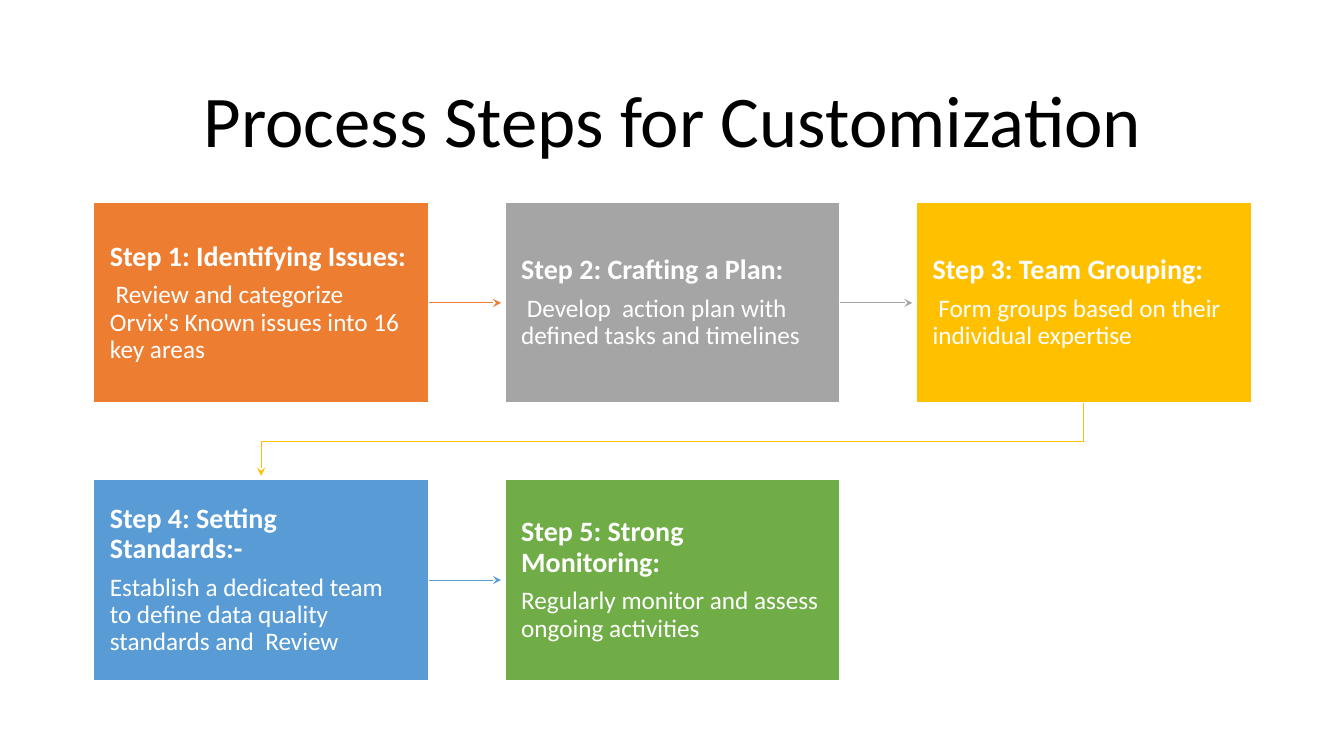
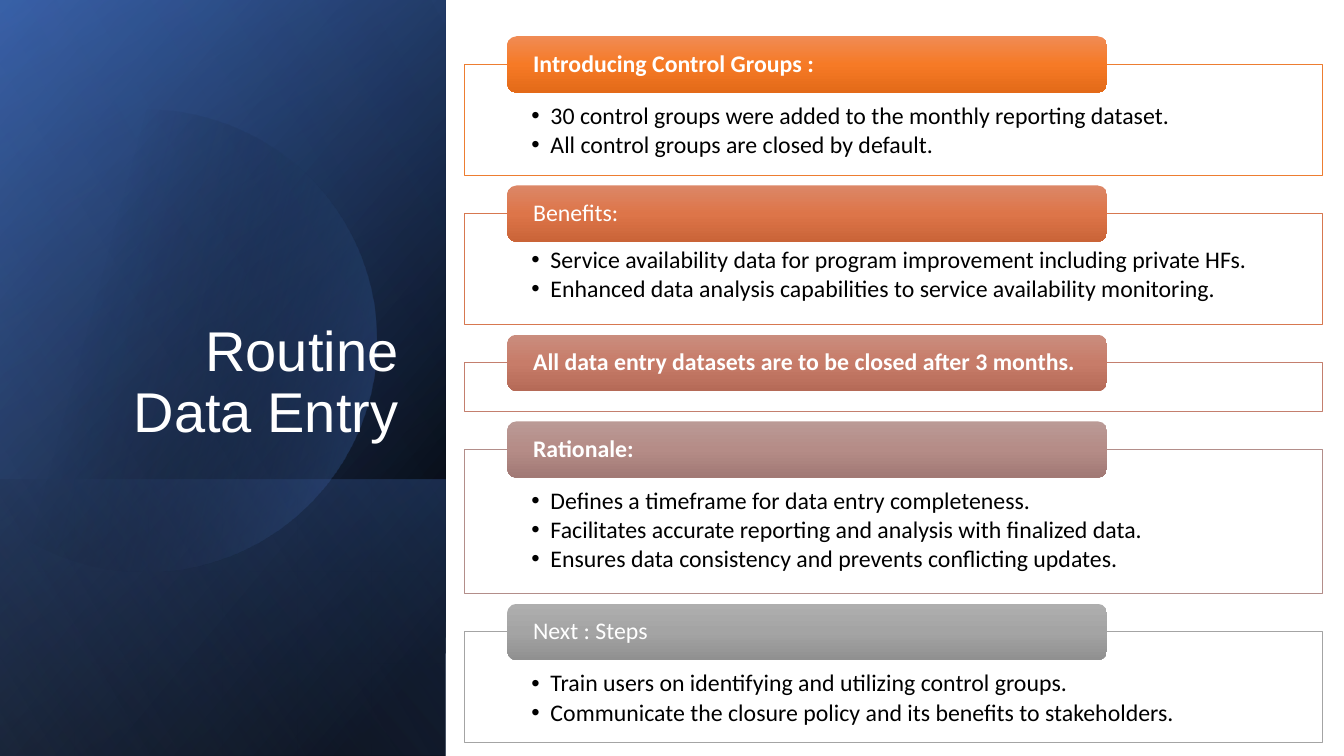
"""Build two slides: a customization process and the routine data entry rules."""
import math
from dataclasses import dataclass

from lxml import etree
from pptx import Presentation
from pptx.dml.color import RGBColor
from pptx.enum import shapes, text
from pptx.oxml.ns import qn
from pptx.util import Inches, Pt


@dataclass(frozen=True)
class Theme:
    """Colours, fonts and type sizes of the presentation."""
    white: str = "FFFFFF"
    black: str = "000000"
    orange: str = "ED7D31"
    grey: str = "A5A5A5"
    gold: str = "FFC000"
    sky: str = "599BD5"
    green: str = "70AD47"
    blue: str = "4472C4"
    navy: str = "2F5496"
    pale_blue: str = "8DA9DB"
    body_font: str = "Calibri"
    side_font: str = "Arial"
    title_size: float = 52
    side_title_size: float = 40
    step_size: float = 20
    detail_size: float = 18
    section_size: float = 17
    thin: float = 0.75
    line_spacing: float = 0.9


THEME = Theme()

STEP_WIDTH, STEP_HEIGHT = 3.32, 1.99
STEP_LEFT, STEP_TOP = 0.93, 2.01
STEP_PITCH_X, STEP_PITCH_Y = 4.08, 2.75
ARROW_GAP = 0.04
COLUMNS = 3
STEPS = [
    (THEME.orange, "Step 1: Identifying Issues:",
     " Review and categorize Orvix's Known issues into 16 key areas"),
    (THEME.grey, "Step 2: Crafting a Plan:",
     " Develop  action plan with defined tasks and timelines"),
    (THEME.gold, "Step 3: Team Grouping:",
     " Form groups based on their individual expertise"),
    (THEME.sky, "Step 4: Setting Standards:-",
     "Establish a dedicated team  to define data quality standards and  Review"),
    (THEME.green, "Step 5: Strong  Monitoring:",
     "Regularly monitor and assess ongoing activities"),
]

SIDE_WIDTH, SLIDE_HEIGHT = 4.42, 7.5
SECTION_TOP, SECTION_GAP, HEADER_RISE = 0.36, 0.1, 0.28
SECTIONS = [
    ("Introducing Control Groups :", True, THEME.orange, ("F08B54", "F67A26", "E36A18"), 1.1, 0.39,
     ["30 control groups were added to the monthly reporting dataset.",
      "All control groups are closed by default."]),
    ("Benefits:", False, "D77850", ("DC8767", "DD7549", "CA6438"), 1.1, 0.34,
     ["Service availability data for program improvement including private HFs.",
      "Enhanced data analysis capabilities to service availability monitoring."]),
    ("All data entry datasets are to be closed after 3 months.", True, "C47F6E",
     ("CA8D7E", "C77C69", "B56A57"), 0.48, 0.39, []),
    ("Rationale:", True, "B38E8A", ("BA9A96", "B58C87", "A17975"), 1.43, 0.39,
     ["Defines a timeframe for data entry completeness.",
      "Facilitates accurate reporting and analysis with finalized data.",
      "Ensures data consistency and prevents conflicting updates."]),
    ("Next : Steps", False, "A4A4A4", ("AEAEAE", "A4A4A4", "909090"), 1.1, 0.39,
     ["Train users on identifying and utilizing control groups.",
      "Communicate the closure policy and its benefits to stakeholders."]),
]


def format_paragraph(paragraph, size, color, font=THEME.body_font, bold=False,
                     align=text.PP_ALIGN.LEFT, before=0):
    """Apply spacing, alignment and run formatting to a paragraph."""
    paragraph.alignment = align
    paragraph.line_spacing = THEME.line_spacing
    paragraph.space_before = Pt(before)
    for run in paragraph.runs:
        run.font.name = font
        run.font.size = Pt(size)
        run.font.bold = bold
        run.font.color.rgb = RGBColor.from_string(color)


def set_frame(frame, anchor, left, top, bottom):
    """Set wrapping, anchor and insets, with equal insets left and right."""
    frame.word_wrap = True
    frame.auto_size = text.MSO_AUTO_SIZE.NONE
    frame.vertical_anchor = anchor
    frame.margin_left = frame.margin_right = Inches(left)
    frame.margin_top, frame.margin_bottom = Inches(top), Inches(bottom)


def add_bullet(paragraph):
    """Give a paragraph a hanging round bullet."""
    properties = paragraph._p.get_or_add_pPr()
    properties.set("marL", str(Inches(0.19)))
    properties.set("indent", str(Inches(-0.19)))
    color = etree.SubElement(properties, qn("a:buClr"))
    etree.SubElement(color, qn("a:srgbClr"), val=THEME.black)
    etree.SubElement(properties, qn("a:buFont"), typeface="Arial")
    etree.SubElement(properties, qn("a:buChar"), char="•")


def set_line(line, color, width):
    """Colour a line and set its width in points."""
    line.color.rgb = RGBColor.from_string(color)
    line.width = Pt(width)


def add_arrowhead(shape):
    """Put a stealth arrowhead at the end of a shape's line."""
    etree.SubElement(shape.line._get_or_add_ln(), qn("a:tailEnd"), type="stealth")


def set_gradient(shape, stops, angle):
    """Fill a shape with (position, colour, opacity) stops, all in percent."""
    shape.fill.background()
    gradient = etree.Element(qn("a:gradFill"), rotWithShape="1")
    stop_list = etree.SubElement(gradient, qn("a:gsLst"))
    for position, color, opacity in stops:
        stop = etree.SubElement(stop_list, qn("a:gs"), pos=str(position * 1000))
        value = etree.SubElement(stop, qn("a:srgbClr"), val=color)
        if opacity < 100:
            etree.SubElement(value, qn("a:alpha"), val=str(opacity * 1000))
    etree.SubElement(gradient, qn("a:lin"), ang=str(angle * 60000), scaled="0")
    properties = shape._element.spPr
    properties.replace(properties.find(qn("a:noFill")), gradient)


def add_box(slide, left, top, width, height, kind=shapes.MSO_SHAPE.RECTANGLE, fill=None):
    """Add a shadowless preset shape, without outline until one is set."""
    shape = slide.shapes.add_shape(kind, Inches(left), Inches(top), Inches(width), Inches(height))
    shape.shadow.inherit = False
    shape.line.fill.background()
    if fill:
        shape.fill.solid()
        shape.fill.fore_color.rgb = RGBColor.from_string(fill)
    return shape


def add_title(slide, words, position, size, color, font, align, anchor):
    """Fill, move and format the title placeholder."""
    title = slide.shapes.title
    title.left, title.top, title.width, title.height = map(Inches, position)
    title.text_frame.text = words
    set_frame(title.text_frame, anchor, 0.1, 0.05, 0.05)
    format_paragraph(title.text_frame.paragraphs[0], size, color, font, align=align)


def add_step(slide, index, color, heading, detail):
    """Add one step box at its place in the grid."""
    row, column = divmod(index, COLUMNS)
    box = add_box(slide, STEP_LEFT + column * STEP_PITCH_X, STEP_TOP + row * STEP_PITCH_Y,
                  STEP_WIDTH, STEP_HEIGHT, fill=color)
    set_line(box.line, THEME.white, 1)
    frame = box.text_frame
    set_frame(frame, text.MSO_ANCHOR.MIDDLE, 0.16, 0.17, 0.17)
    frame.text = heading
    format_paragraph(frame.paragraphs[0], THEME.step_size, THEME.white, bold=True)
    paragraph = frame.add_paragraph()
    paragraph.text = detail
    format_paragraph(paragraph, THEME.detail_size, THEME.white, before=7)
    return box


def add_row_arrow(slide, source, target, color):
    """Point an arrow from a step to the next one in its row."""
    middle = source.top + source.height // 2
    arrow = slide.shapes.add_connector(shapes.MSO_CONNECTOR.STRAIGHT, source.left + source.width,
                                       middle, target.left - Inches(ARROW_GAP), middle)
    arrow.begin_connect(source, 3)
    set_line(arrow.line, color, THEME.thin)
    add_arrowhead(arrow)
    etree.SubElement(arrow._element.spPr, qn("a:effectLst"))


def add_turn_arrow(slide, source, target, color):
    """Lead an arrow from the end of one row to the start of the next."""
    start_x, end_x = (box.left + box.width // 2 for box in (source, target))
    start_y = source.top + source.height
    middle_y = (start_y + target.top) // 2
    builder = slide.shapes.build_freeform(start_x, start_y)
    builder.add_line_segments([(start_x, middle_y), (end_x, middle_y),
                               (end_x, target.top - Inches(ARROW_GAP))], close=False)
    arrow = builder.convert_to_shape()
    arrow.shadow.inherit = False
    arrow.fill.background()
    set_line(arrow.line, color, THEME.thin)
    add_arrowhead(arrow)


def add_side_layer(slide, top, stops, angle):
    """Add a turned, mirrored gradient layer from top to the slide's foot."""
    height = SLIDE_HEIGHT - top
    layer = add_box(slide, (SIDE_WIDTH - height) / 2, top + (height - SIDE_WIDTH) / 2,
                    height, SIDE_WIDTH)
    layer.rotation = 90
    layer._element.spPr.xfrm.set("flipH", "1")
    set_gradient(layer, stops, angle)


def add_side_circle(slide):
    """Add the translucent circle, cut off at the slide's left edge."""
    center_x, center_y, radius, count = 1.44, 3.38, 2.29, 90
    limit = math.acos(-center_x / radius)
    angles = [limit * (2 * index / count - 1) for index in range(count + 1)]
    points = [(Inches(center_x + radius * math.cos(angle)),
               Inches(center_y + radius * math.sin(angle))) for angle in angles]
    builder = slide.shapes.build_freeform(*points[0])
    builder.add_line_segments(points[1:])
    circle = builder.convert_to_shape()
    circle.shadow.inherit = False
    circle.line.fill.background()
    set_gradient(circle, [(0, THEME.black, 0), (29, THEME.black, 0), (100, THEME.blue, 43)], 15)


def add_section(slide, top, heading, bold, color, shades, height, inset, bullets):
    """Add an outlined list with its header tab."""
    panel = add_box(slide, 4.61, top + HEADER_RISE, 8.51, height, fill=THEME.white)
    set_line(panel.line, color, THEME.thin)
    if bullets:
        frame = panel.text_frame
        set_frame(frame, text.MSO_ANCHOR.TOP, 0.66, inset, 0.13)
        frame.text = "\n".join(bullets)
        for index, paragraph in enumerate(frame.paragraphs):
            format_paragraph(paragraph, THEME.section_size, THEME.black,
                             before=2.5 if index else 0)
            add_bullet(paragraph)
    header = add_box(slide, 5.03, top, 5.95, 2 * HEADER_RISE, shapes.MSO_SHAPE.ROUNDED_RECTANGLE)
    set_gradient(header, [(50 * index, shade, 100) for index, shade in enumerate(shades)], 90)
    set_frame(header.text_frame, text.MSO_ANCHOR.MIDDLE, 0.23, 0, 0)
    header.text_frame.text = heading
    format_paragraph(header.text_frame.paragraphs[0], THEME.section_size, THEME.white, bold=bold)


def build_process(slide):
    """Build the slide with the five process steps."""
    add_title(slide, "Process Steps for Customization", (0.92, 0.61, 11.5, 1.24), THEME.title_size,
              THEME.black, THEME.body_font, text.PP_ALIGN.CENTER, text.MSO_ANCHOR.MIDDLE)
    boxes = [add_step(slide, index, *step) for index, step in enumerate(STEPS)]
    for index, (source, target) in enumerate(zip(boxes, boxes[1:])):
        add_arrow = add_turn_arrow if (index + 1) % COLUMNS == 0 else add_row_arrow
        add_arrow(slide, source, target, STEPS[index][0])


def build_data_entry(slide):
    """Build the slide with the side panel and the five sections."""
    black, blue, pale = THEME.black, THEME.blue, THEME.pale_blue
    add_side_layer(slide, 0, [(0, black, 100), (8, black, 100), (100, THEME.navy, 100)], 50)
    add_side_layer(slide, 0, [(0, black, 0), (99, blue, 46), (100, blue, 46)], 30)
    add_side_layer(slide, 4.76, [(0, blue, 29), (2, blue, 29), (100, black, 30)], 130)
    add_side_circle(slide)
    add_side_layer(slide, 0, [(0, black, 0), (99, pale, 11), (100, pale, 11)], 120)
    add_title(slide, "Routine Data Entry", (0.64, 1.84, 3.41, 2.62), THEME.side_title_size,
              THEME.white, THEME.side_font, text.PP_ALIGN.RIGHT, text.MSO_ANCHOR.BOTTOM)
    title = slide.shapes.title._element
    title.getparent().append(title)
    top = SECTION_TOP
    for section in SECTIONS:
        add_section(slide, top, *section)
        top += HEADER_RISE + section[4] + SECTION_GAP


def main():
    """Create the presentation and save it."""
    presentation = Presentation()
    presentation.slide_width, presentation.slide_height = Inches(13.33), Inches(SLIDE_HEIGHT)
    for build in (build_process, build_data_entry):
        build(presentation.slides.add_slide(presentation.slide_layouts[5]))
    presentation.save("out.pptx")


if __name__ == "__main__":
    main()
